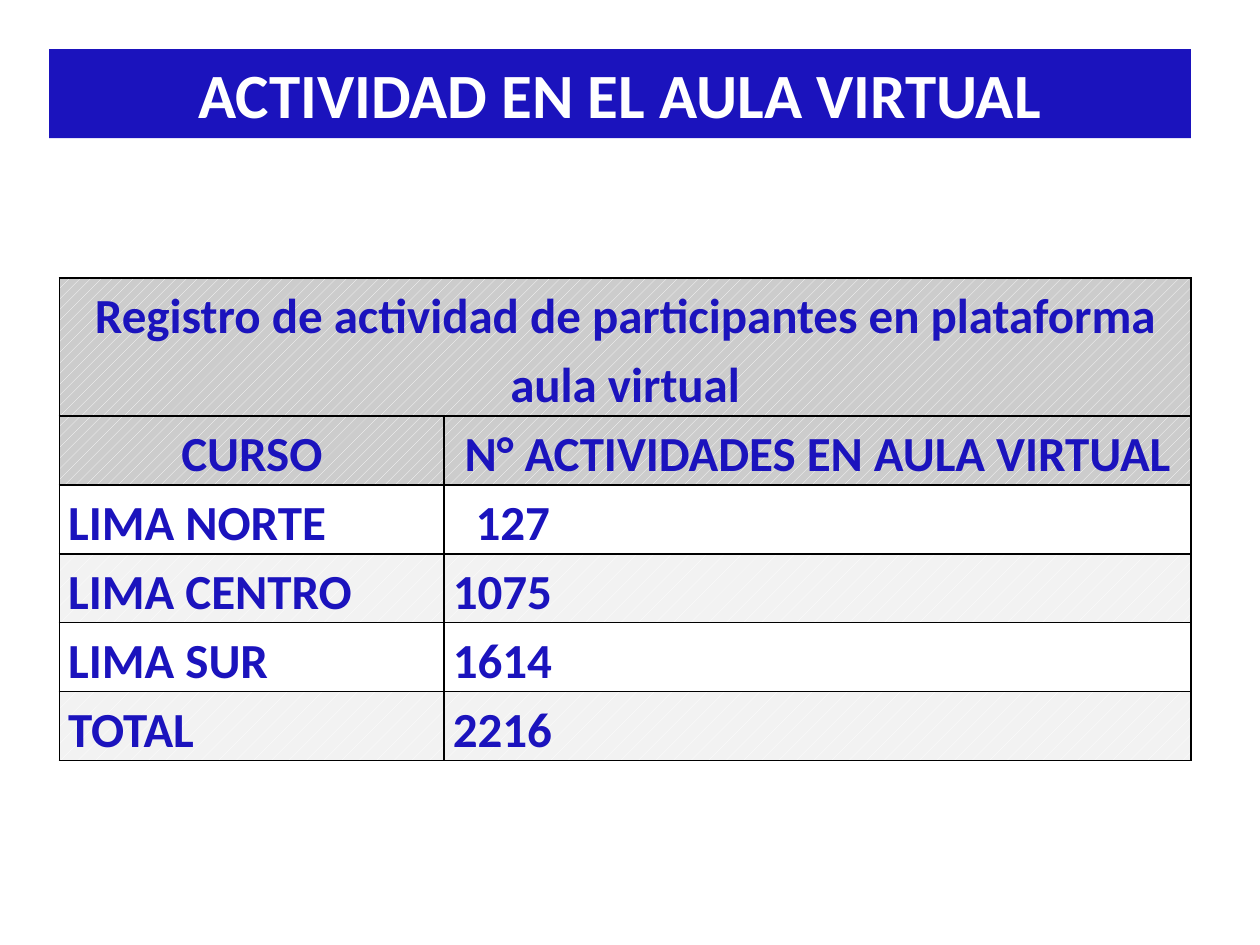
from pptx import Presentation
from pptx.dml.color import RGBColor
from pptx.enum.dml import MSO_PATTERN
from pptx.enum.text import MSO_ANCHOR, PP_ALIGN
from pptx.oxml import parse_xml
from pptx.oxml.ns import nsdecls
from pptx.util import Pt

BLUE = RGBColor(0x1B, 0x13, 0xBD)
WHITE = RGBColor(0xFF, 0xFF, 0xFF)
HEADER_GREY = RGBColor(0xCC, 0xCC, 0xCC)
BAND_GREY = RGBColor(0xF2, 0xF2, 0xF2)

HEADINGS = ("CURSO", "N° ACTIVIDADES EN AULA VIRTUAL")
ACTIVITY = [
    ("LIMA NORTE", "127"),
    ("LIMA CENTRO", "1075"),
    ("LIMA SUR", "1614"),
    ("TOTAL", "2216"),
]
CELL_MARGIN = 5
SHORT_NUMBER_INDENT = 13


def style_text(paragraph, size, color, alignment):
    paragraph.alignment = alignment
    paragraph.font.name = "Calibri"
    paragraph.font.size = Pt(size)
    paragraph.font.bold = True
    paragraph.font.color.rgb = color


def add_title(slide, left, top, width, height):
    title = slide.shapes.title
    title.left, title.top = Pt(left), Pt(top)
    title.width, title.height = Pt(width), Pt(height)
    title.fill.solid()
    title.fill.fore_color.rgb = BLUE
    title.text_frame.text = "ACTIVIDAD EN EL AULA VIRTUAL"
    title.text_frame.vertical_anchor = MSO_ANCHOR.MIDDLE
    style_text(title.text_frame.paragraphs[0], 36, WHITE, PP_ALIGN.CENTER)


def add_borders(cell):
    properties = cell._tc.get_or_add_tcPr()
    # Border lines come before the fill in the cell properties
    for position, side in enumerate(("lnL", "lnR", "lnT", "lnB")):
        properties.insert(position, parse_xml(
            f'<a:{side} {nsdecls("a")} w="{Pt(1)}"><a:solidFill>'
            f'<a:srgbClr val="000000"/></a:solidFill></a:{side}>'))


def fill_cell(cell, pattern, color):
    if pattern is None:
        cell.fill.solid()
        cell.fill.fore_color.rgb = color
    else:
        cell.fill.patterned()
        cell.fill.pattern = pattern
        cell.fill.fore_color.rgb = WHITE
        cell.fill.back_color.rgb = color


def row_look(row):
    if row < 2:
        return MSO_PATTERN.PERCENT_20, HEADER_GREY
    if row % 2:
        return MSO_PATTERN.PERCENT_5, BAND_GREY
    return None, WHITE


def add_activity_table(slide, left, top, width, height):
    rows = [("Registro de actividad de participantes en plataforma aula virtual", ""),
            HEADINGS, *ACTIVITY]
    table = slide.shapes.add_table(
        len(rows), 2, Pt(left), Pt(top), Pt(width), Pt(height)).table
    table.first_row = table.horz_banding = False
    course_width = width * 0.34
    table.columns[0].width = Pt(course_width)
    table.columns[1].width = Pt(width - course_width)

    # The heading wraps to two lines, so its row is twice as high
    line_height = height / (len(rows) + 1)
    for index, texts in enumerate(rows):
        table.rows[index].height = Pt(line_height * (2 if index == 0 else 1))
        for column, text in enumerate(texts):
            cell = table.cell(index, column)
            cell.text = text
            cell.margin_left = cell.margin_right = Pt(CELL_MARGIN)
            cell.margin_top = cell.margin_bottom = Pt(0)
            paragraph = cell.text_frame.paragraphs[0]
            paragraph.line_spacing = 1.15
            style_text(paragraph, 28, BLUE,
                       PP_ALIGN.CENTER if index < 2 else PP_ALIGN.JUSTIFY)
            fill_cell(cell, *row_look(index))
            add_borders(cell)
    table.cell(0, 0).merge(table.cell(0, 1))

    # Shift the three-digit count towards the longer ones
    table.cell(2, 1).margin_left = Pt(CELL_MARGIN + SHORT_NUMBER_INDENT)


def main():
    presentation = Presentation()
    presentation.slide_width, presentation.slide_height = Pt(720), Pt(540)
    slide = presentation.slides.add_slide(presentation.slide_layouts[5])
    add_title(slide, 28, 28, 652.5, 51)
    add_activity_table(slide, 34, 159, 646.5, 270.7)
    presentation.save("out.pptx")


if __name__ == "__main__":
    main()
